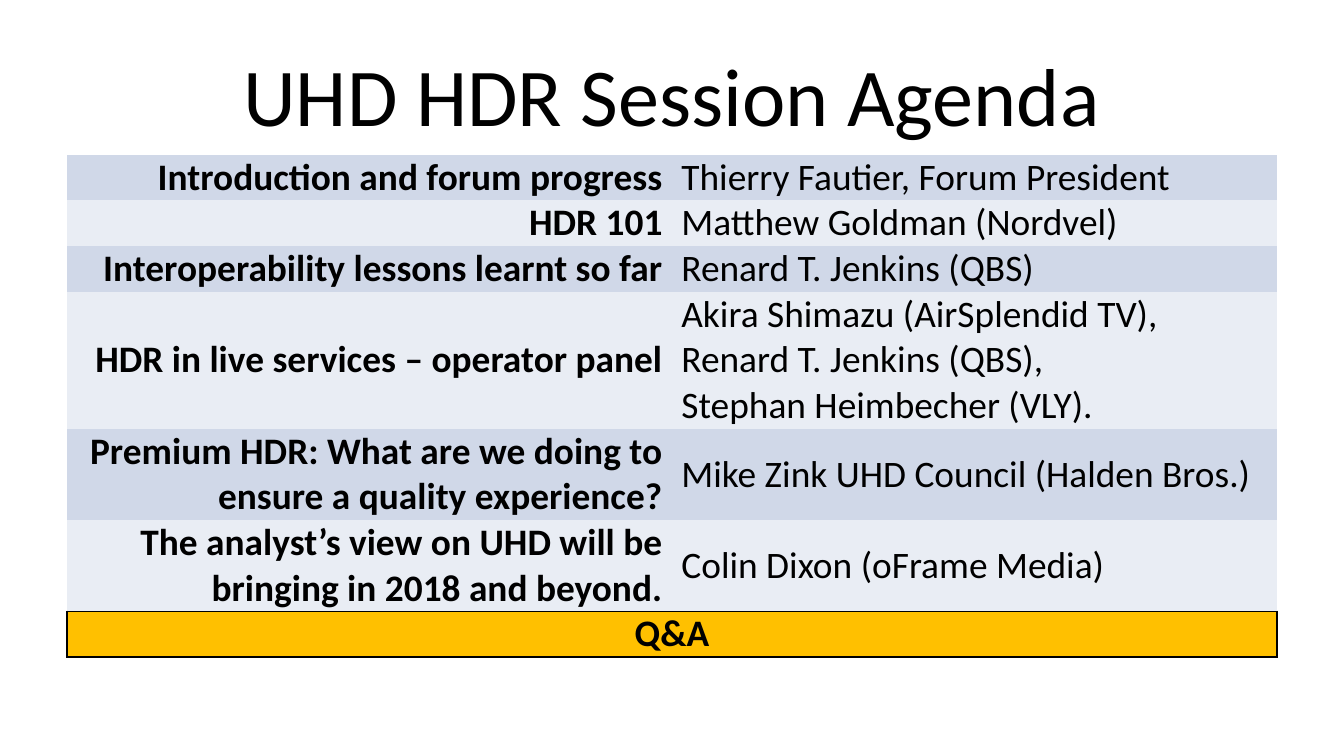
from lxml import etree
from pptx import Presentation
from pptx.dml.color import RGBColor
from pptx.enum.text import MSO_ANCHOR as Anchor, PP_ALIGN as Align
from pptx.oxml import parse_xml
from pptx.oxml.ns import nsdecls, qn
from pptx.util import Inches, Pt

BLACK = RGBColor(0x00, 0x00, 0x00)
AMBER = RGBColor(0xFF, 0xC0, 0x00)
BANDS = [RGBColor(0xD0, 0xD8, 0xE8), RGBColor(0xE9, 0xED, 0xF4)]
NO_STYLE = "{2D5ABB26-0587-4C30-8999-92F81FD0307C}"
LINE_HEIGHT = 0.34

# Topic, speakers, number of text lines in the row
AGENDA = [
    ("Introduction and forum progress", ["Thierry Fautier, Forum President"], 1),
    ("HDR 101", ["Matthew Goldman (Nordvel)"], 1),
    ("Interoperability lessons learnt so far", ["Renard T. Jenkins (QBS)"], 1),
    ("HDR in live services – operator panel",
     ["Akira Shimazu (AirSplendid TV),", "Renard T. Jenkins (QBS),",
      "Stephan Heimbecher (VLY)."], 3),
    ("Premium HDR: What are we doing to ensure a quality experience?",
     ["Mike Zink UHD Council (Halden Bros.)"], 2),
    ("The analyst’s view on UHD will be bringing in 2018 and beyond.",
     ["Colin Dixon (oFrame Media)"], 2),
]


def write(frame, lines, size=20, bold=False, align=Align.LEFT):
    for index, line in enumerate(lines):
        paragraph = frame.paragraphs[0] if index == 0 else frame.add_paragraph()
        paragraph.alignment = align
        run = paragraph.add_run()
        run.text = line
        run.font.name = "Calibri"
        run.font.size = Pt(size)
        run.font.bold = bold
        run.font.color.rgb = BLACK


def format_cell(cell, color, borders=()):
    """Fill the cell, set its margins and draw the named border sides (L, R, T, B)."""
    cell.vertical_anchor = Anchor.MIDDLE
    cell.margin_left = cell.margin_right = Inches(0.07)
    cell.margin_top = cell.margin_bottom = 0
    cell.fill.solid()
    cell.fill.fore_color.rgb = color
    properties = cell._tc.get_or_add_tcPr()
    for index, side in enumerate(borders):
        line = parse_xml(f'<a:ln{side} {nsdecls("a")} w="{Pt(1)}"/>')
        fill = etree.SubElement(line, qn("a:solidFill"))
        etree.SubElement(fill, qn("a:srgbClr"), val=str(BLACK))
        properties.insert(index, line)


presentation = Presentation()
presentation.slide_width = Inches(10)
presentation.slide_height = Inches(10) * 9 // 16
slide = presentation.slides.add_slide(presentation.slide_layouts[6])

title = slide.shapes.add_textbox(Inches(0.5), Inches(0.23), Inches(9), Inches(0.94))
title.text_frame.word_wrap = True
title.text_frame.vertical_anchor = Anchor.MIDDLE
write(title.text_frame, ["UHD HDR Session Agenda"], size=44, align=Align.CENTER)

line_counts = [count for _, _, count in AGENDA] + [1]
table = slide.shapes.add_table(
    len(line_counts), 2, Inches(0.5), Inches(1.15),
    Inches(9), Inches(LINE_HEIGHT * sum(line_counts))).table
table.first_row = table.horz_banding = False
table._tbl.tblPr.find(qn("a:tableStyleId")).text = NO_STYLE
for row, count in zip(table.rows, line_counts):
    row.height = Inches(LINE_HEIGHT * count)

for row_index, (topic, speakers, _) in enumerate(AGENDA):
    topic_cell, speaker_cell = table.rows[row_index].cells
    borders = "B" if row_index == len(AGENDA) - 1 else ""
    for cell in (topic_cell, speaker_cell):
        format_cell(cell, BANDS[row_index % 2], borders)
    write(topic_cell.text_frame, [topic], bold=True, align=Align.RIGHT)
    write(speaker_cell.text_frame, speakers)

closing_cell, closing_end = table.rows[len(AGENDA)].cells
closing_cell.merge(closing_end)
for cell in (closing_cell, closing_end):
    format_cell(cell, AMBER, "LRTB")
write(closing_cell.text_frame, ["Q&A"], bold=True, align=Align.CENTER)

presentation.save("out.pptx")
